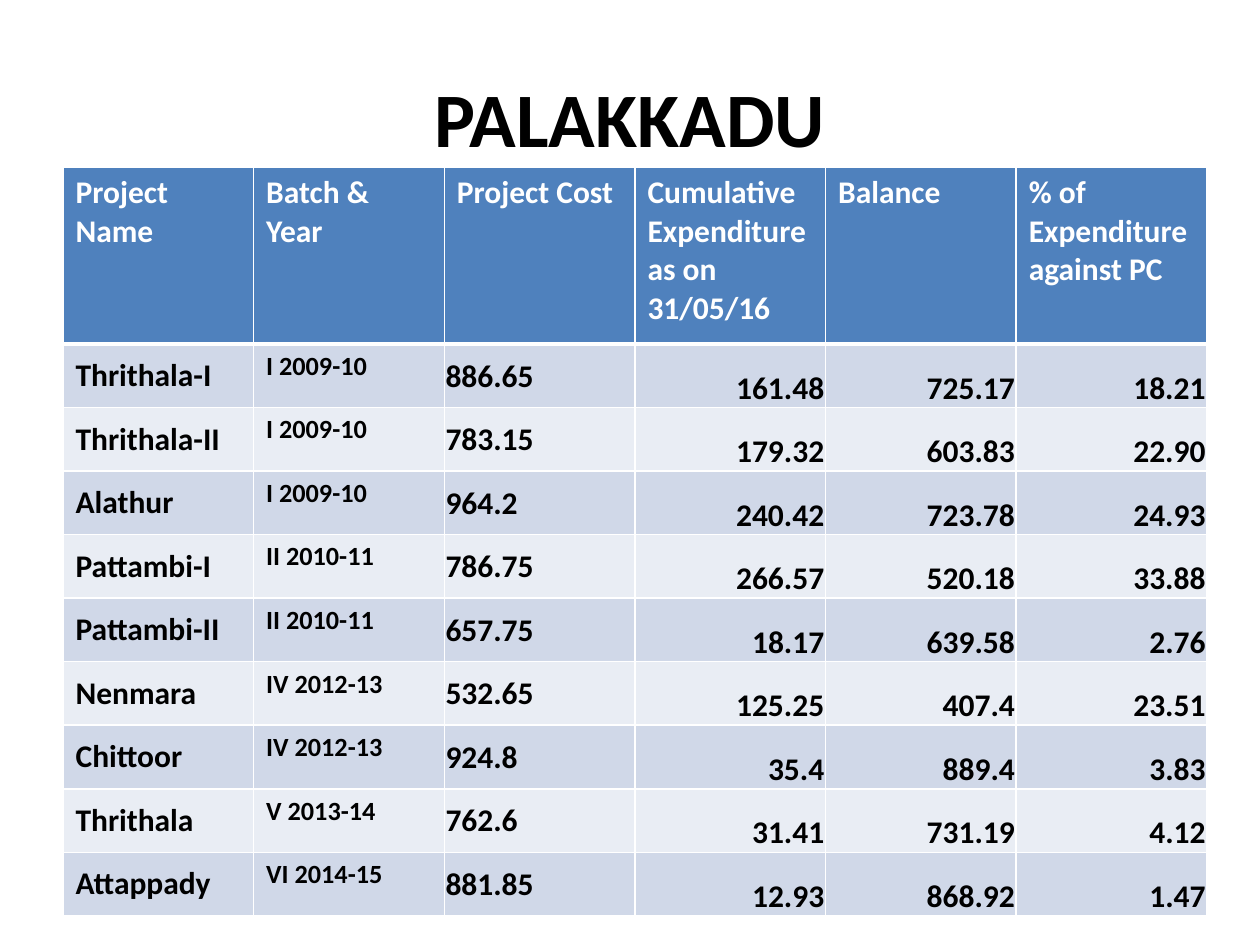
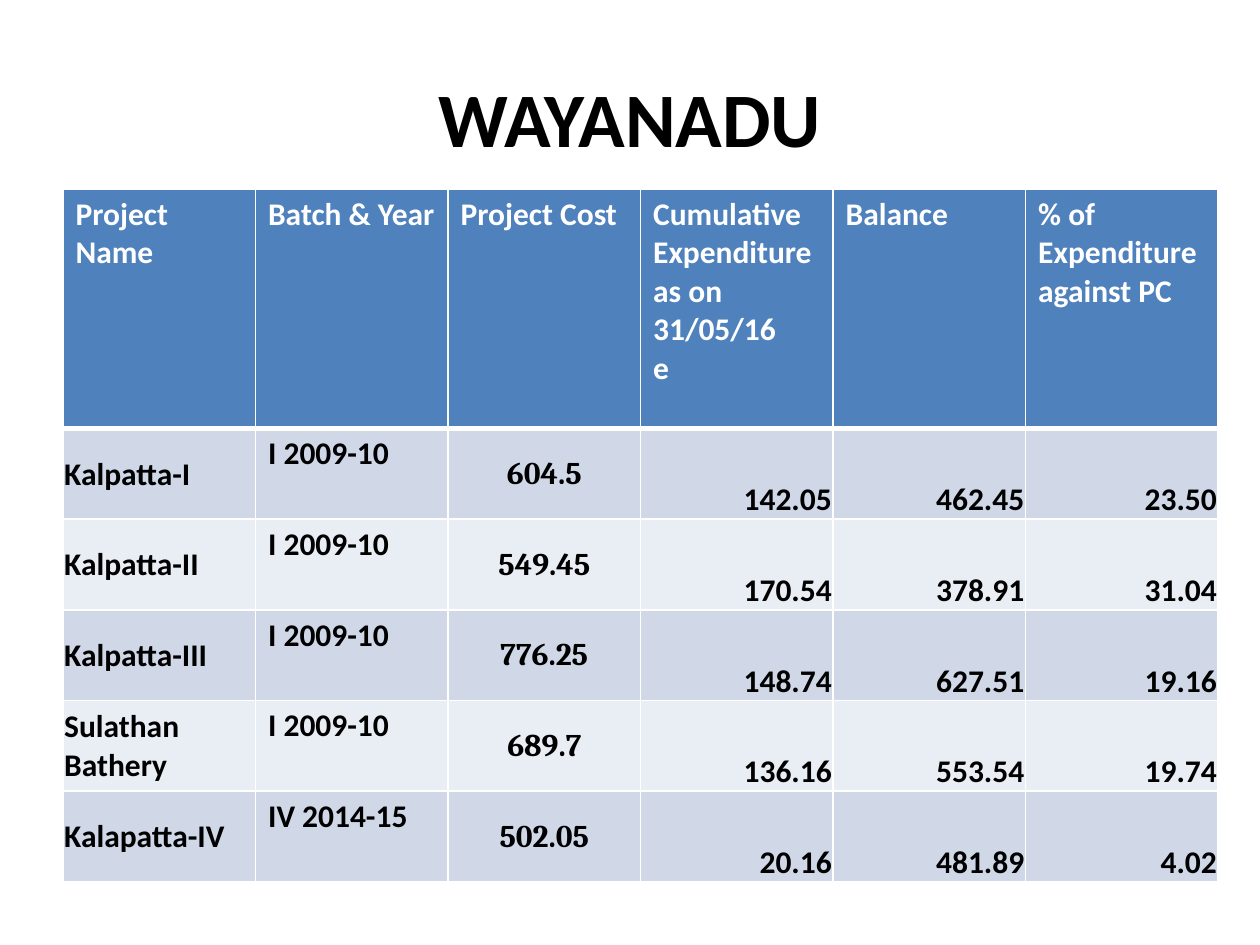
from lxml import etree
from pptx import Presentation
from pptx.dml.color import RGBColor
from pptx.enum.text import MSO_ANCHOR, PP_ALIGN
from pptx.oxml.ns import qn
from pptx.util import Inches, Pt

TOP, MID, LOW = MSO_ANCHOR.TOP, MSO_ANCHOR.MIDDLE, MSO_ANCHOR.BOTTOM
LEFT, CENTER, RIGHT = PP_ALIGN.LEFT, PP_ALIGN.CENTER, PP_ALIGN.RIGHT
SANS, SERIF = "Calibri", "Cambria"
WHITE, BLACK, BLUE = "FFFFFF", "000000", "4F81BD"
BANDS = ("D0D8E8", "E9EDF4")
SIDES = ("lnL", "lnR", "lnT", "lnB")


def rgb(code):
    return RGBColor.from_string(code)


class Deck:
    """Holds the shared style and the current slide."""

    def __init__(self):
        self.prs = Presentation()
        self.prs.slide_width, self.prs.slide_height = Inches(10), Inches(7.5)

    def page(self, title):
        self.slide = self.prs.slides.add_slide(self.prs.slide_layouts[5])
        box = self.slide.shapes.title
        box.left, box.top = Inches(0.5), Inches(0.3)
        box.width, box.height = Inches(9), Inches(1.25)
        self.text(box.text_frame, title, 44, BLACK, align=CENTER)
        box.text_frame.vertical_anchor = MID

    def text(self, frame, text, size, color, face=SANS, align=LEFT):
        frame.text = text
        for par in frame.paragraphs:
            par.alignment = align
            font = par.font
            font.name, font.size, font.bold = face, Pt(size), True
            font.color.rgb = rgb(color)

    def edges(self, cell, base):
        props = cell._tc.get_or_add_tcPr()
        for side in SIDES:
            width = base if side == "lnB" else 1
            line = etree.SubElement(props, qn("a:" + side), w=str(Pt(width)))
            fill = etree.SubElement(line, qn("a:solidFill"))
            etree.SubElement(fill, qn("a:srgbClr"), val=WHITE)

    def cell(self, cell, text, fill, color, base=1, size=18, face=SANS,
             align=LEFT, anchor=TOP, tight=False):
        self.text(cell.text_frame, text, size, color, face, align)
        cell.vertical_anchor = anchor
        if tight:
            cell.margin_left = cell.margin_right = cell.margin_top = Inches(0.01)
            cell.margin_bottom = 0
        self.edges(cell, base)
        cell.fill.solid()
        cell.fill.fore_color.rgb = rgb(fill)

    def table(self, top, width, height, first, heads, rows, styles):
        grid = self.slide.shapes.add_table(
            len(rows) + 1, len(heads), Inches(0.5), Inches(top),
            Inches(width), Inches(height)).table
        for col in grid.columns:
            col.width = Inches(width / len(heads))
        for row in grid.rows:
            row.height = Inches((height - first) / len(rows))
        grid.rows[0].height = Inches(first)
        for c, head in enumerate(heads):
            self.cell(grid.cell(0, c), head, BLUE, WHITE, base=3)
        for r, row in enumerate(rows):
            for c, (text, style) in enumerate(zip(row, styles)):
                self.cell(grid.cell(r + 1, c), text, BANDS[r % 2], BLACK, **style)


def heads(spent):
    return ("Project Name", "Batch & Year", "Project Cost", spent, "Balance",
            "% of Expenditure against PC")


SPENT = "Cumulative Expenditure as on 31/05/16"
SUM = dict(align=RIGHT, anchor=LOW, tight=True)
PALAKKADU = (
    ("Thrithala-I", "I 2009-10", "886.65", "161.48", "725.17", "18.21"),
    ("Thrithala-II", "I 2009-10", "783.15", "179.32", "603.83", "22.90"),
    ("Alathur", "I 2009-10", "964.2", "240.42", "723.78", "24.93"),
    ("Pattambi-I", "II 2010-11", "786.75", "266.57", "520.18", "33.88"),
    ("Pattambi-II", "II 2010-11", "657.75", "18.17", "639.58", "2.76"),
    ("Nenmara", "IV 2012-13", "532.65", "125.25", "407.4", "23.51"),
    ("Chittoor", "IV 2012-13", "924.8", "35.4", "889.4", "3.83"),
    ("Thrithala", "V 2013-14", "762.6", "31.41", "731.19", "4.12"),
    ("Attappady", "VI 2014-15", "881.85", "12.93", "868.92", "1.47"),
)
WAYANADU = (
    ("Kalpatta-I", "I 2009-10", "604.5", "142.05", "462.45", "23.50"),
    ("Kalpatta-II", "I 2009-10", "549.45", "170.54", "378.91", "31.04"),
    ("Kalpatta-III", "I 2009-10", "776.25", "148.74", "627.51", "19.16"),
    ("Sulathan Bathery", "I 2009-10", "689.7", "136.16", "553.54", "19.74"),
    ("Kalapatta-IV", "IV 2014-15", "502.05", "20.16", "481.89", "4.02"),
)


def main():
    deck = Deck()
    deck.page("PALAKKADU")
    deck.table(1.33, 9.08, 5.94, 1.4, heads(SPENT), PALAKKADU,
               [dict(anchor=MID), dict(size=15),
                dict(anchor=MID, tight=True)] + [SUM] * 3)
    deck.page("WAYANADU")
    deck.table(1.5, 9.17, 5.5, 1.9, heads(SPENT + "\ne"), WAYANADU,
               [dict(anchor=MID, tight=True), {},
                dict(face=SERIF, align=CENTER, anchor=MID, tight=True)] + [SUM] * 3)
    deck.prs.save("out.pptx")


if __name__ == "__main__":
    main()
